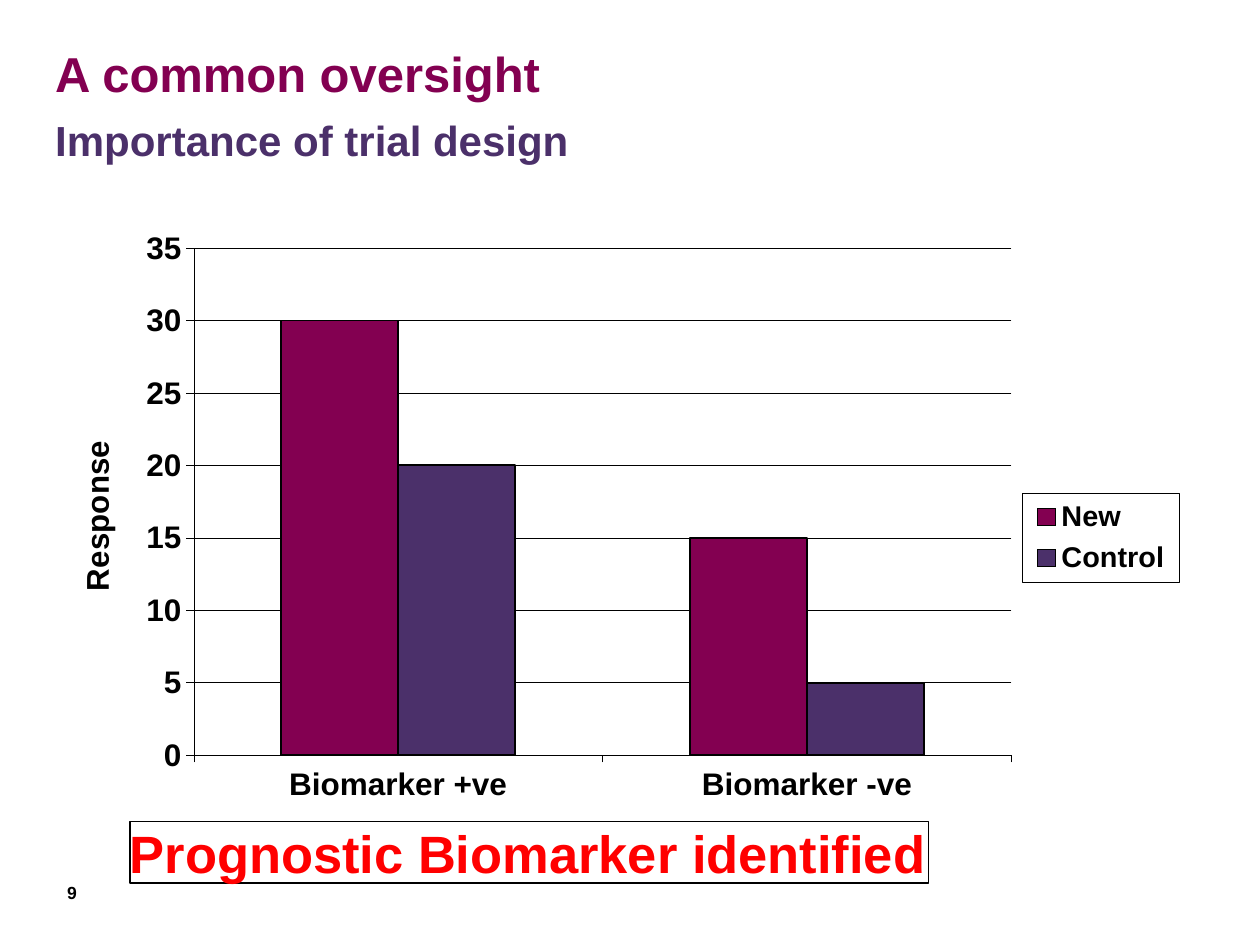
from pptx import Presentation
from pptx.chart.data import CategoryChartData
from pptx.dml.color import RGBColor
from pptx.enum.chart import XL_CHART_TYPE, XL_LEGEND_POSITION, XL_TICK_LABEL_POSITION, XL_TICK_MARK
from pptx.enum.shapes import MSO_SHAPE
from pptx.enum.text import MSO_ANCHOR, PP_ALIGN
from pptx.oxml import parse_xml
from pptx.oxml.ns import nsdecls, qn
from pptx.util import Inches, Pt

TITLE = "A common oversight"
SUBTITLE = "Importance of trial design"
CONCLUSION = "Prognostic Biomarker identified"
PAGE_NUMBER = "9"
BIOMARKERS = ["Biomarker +ve", "Biomarker -ve"]
RESPONSES = [("New", (30, 15), "plum"), ("Control", (20, 5), "violet")]
RESPONSE_LABEL = "Response"

THEME = {
    "font": "Arial",
    "colors": {"plum": "830051", "violet": "4B306A", "black": "000000", "white": "FFFFFF", "red": "FF0000"},
    "sizes": {"title": 28, "subtitle": 24, "axis": 18, "legend": 16.5, "page": 10, "conclusion": 30},
}


def color(name):
    return RGBColor.from_string(THEME["colors"][name])


def style_font(font, size, ink="black"):
    font.name = THEME["font"]
    font.size = Pt(THEME["sizes"][size])
    font.bold = True
    font.color.rgb = color(ink)


def style_line(line, width):
    line.color.rgb = color("black")
    line.width = Pt(width)


def write(shape, text, *, size, ink="black", align=PP_ALIGN.LEFT, insets=(0.1, 0.05),
          wrap=True, anchor=MSO_ANCHOR.TOP):
    frame = shape.text_frame
    frame.word_wrap = wrap
    frame.vertical_anchor = anchor
    frame.margin_left = frame.margin_right = Inches(insets[0])
    frame.margin_top = frame.margin_bottom = Inches(insets[1])
    paragraph = frame.paragraphs[0]
    paragraph.alignment = align
    run = paragraph.add_run()
    run.text = text
    style_font(run.font, size, ink)


def manual_layout(x, y, w, h, target=""):
    modes = "".join(f'<c:{side}Mode val="edge"/>' for side in "xy")
    sizes = "".join(f'<c:{key} val="{value}"/>' for key, value in zip("xywh", (x, y, w, h)))
    return parse_xml(f'<c:layout {nsdecls("c")}><c:manualLayout>{target}{modes}{sizes}</c:manualLayout></c:layout>')


def add_response_chart(slide):
    data = CategoryChartData()
    data.categories = BIOMARKERS
    for treatment, values, _ in RESPONSES:
        data.add_series(treatment, values)
    chart = slide.shapes.add_chart(XL_CHART_TYPE.COLUMN_CLUSTERED, Inches(0.56), Inches(1.83),
                                   Inches(8.89), Inches(4.78), data).chart
    style_font(chart.font, "axis")
    chart.has_title = False

    plot = chart.plots[0]
    plot.gap_width = 150
    plot.overlap = 0
    plot.vary_by_categories = False
    for series, (_, _, fill) in zip(plot.series, RESPONSES):
        series.format.fill.solid()
        series.format.fill.fore_color.rgb = color(fill)
        style_line(series.format.line, 1)

    for axis in (chart.category_axis, chart.value_axis):
        axis.major_tick_mark = XL_TICK_MARK.OUTSIDE
        axis.minor_tick_mark = XL_TICK_MARK.NONE
        style_font(axis.tick_labels.font, "axis")
        style_line(axis.format.line, 0.25)
    chart.category_axis.tick_label_position = XL_TICK_LABEL_POSITION.LOW

    response_axis = chart.value_axis
    response_axis.minimum_scale = 0
    response_axis.maximum_scale = 35
    response_axis.major_unit = 5
    response_axis.has_major_gridlines = True
    style_line(response_axis.major_gridlines.format.line, 0.25)
    label = response_axis.axis_title.text_frame.paragraphs[0].add_run()
    label.text = RESPONSE_LABEL
    style_font(label.font, "axis")

    plot_area = chart.element.find(f".//{qn('c:plotArea')}")
    for layout in plot_area.findall(qn("c:layout")):
        plot_area.remove(layout)
    plot_area.insert(0, manual_layout(0.11, 0.02, 0.73, 0.85, '<c:layoutTarget val="inner"/>'))

    chart.has_legend = True
    legend = chart.legend
    legend.position = XL_LEGEND_POSITION.RIGHT
    legend.include_in_layout = False
    style_font(legend.font, "legend")
    legend_xml = chart.element.find(f".//{qn('c:legend')}")
    for layout in legend_xml.findall(qn("c:layout")):
        legend_xml.remove(layout)
    legend_xml.find(qn("c:legendPos")).addnext(manual_layout(0.85, 0.43, 0.14, 0.15))
    legend_xml.find(qn("c:overlay")).addnext(parse_xml(
        f'<c:spPr {nsdecls("c", "a")}><a:ln w="{Pt(0.25)}"><a:solidFill>'
        f'<a:srgbClr val="{THEME["colors"]["black"]}"/></a:solidFill></a:ln></c:spPr>'))


def main():
    deck = Presentation()
    deck.slide_width, deck.slide_height = Inches(10), Inches(7.5)
    slide = deck.slides.add_slide(deck.slide_layouts[6])

    add_response_chart(slide)

    headings = [(TITLE, "title", "plum"), (SUBTITLE, "subtitle", "violet")]
    for row, (text, size, ink) in enumerate(headings):
        heading = slide.shapes.add_textbox(Inches(0.34), Inches(0.3 + row * 0.56), Inches(9.2), Inches(0.56))
        write(heading, text, size=size, ink=ink)

    page = slide.shapes.add_textbox(Inches(0.12), Inches(6.95), Inches(0.51), Inches(0.39))
    write(page, PAGE_NUMBER, size="page", align=PP_ALIGN.RIGHT, insets=(0.02, 0.05))

    conclusion = slide.shapes.add_shape(MSO_SHAPE.RECTANGLE, Inches(1.03), Inches(6.52), Inches(6.34), Inches(0.49))
    conclusion.shadow.inherit = False
    conclusion.fill.solid()
    conclusion.fill.fore_color.rgb = color("white")
    style_line(conclusion.line, 1)
    write(conclusion, CONCLUSION, size="conclusion", ink="red", insets=(0, 0), wrap=False,
          anchor=MSO_ANCHOR.MIDDLE)

    deck.save("out.pptx")


if __name__ == "__main__":
    main()
